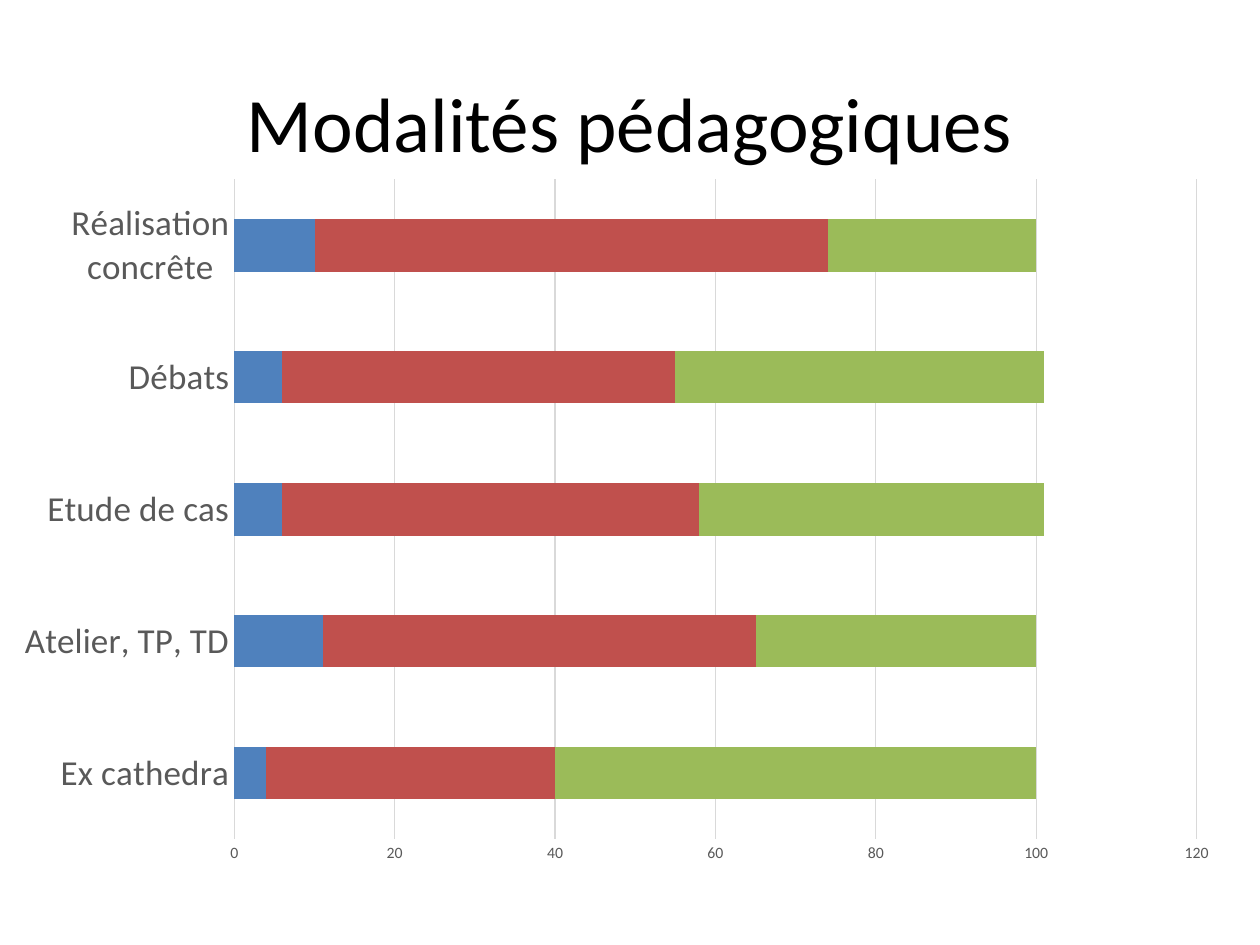
from dataclasses import dataclass

from lxml import etree
from pptx import Presentation
from pptx import util as u
from pptx.chart.data import CategoryChartData
from pptx.dml.color import RGBColor
from pptx.enum import chart as charts, text
from pptx.oxml.ns import qn

FONT = "Calibri"
GREY = "595959"
PALE = "D9D9D9"


@dataclass
class Band:
    shares: tuple[int, ...]
    color: str


METHODS = ["Ex cathedra", "Atelier, TP, TD", "Etude de cas", "Débats", "Réalisation concrête"]
BANDS = [
    Band((4, 11, 6, 6, 10), "4F81BD"),
    Band((36, 54, 52, 49, 64), "C0504D"),
    Band((60, 35, 43, 46, 26), "9BBB59"),
]


def rgb(color: str) -> RGBColor:
    return RGBColor.from_string(color)


def set_font(font, size: float, color: str) -> None:
    font.name = FONT
    font.size = u.Pt(size)
    font.bold = False
    font.color.rgb = rgb(color)


def set_line(line, color: str) -> None:
    line.color.rgb = rgb(color)
    line.width = u.Pt(0.75)


def place_plot(chart, x: float, y: float, w: float, h: float) -> None:
    """Fix the inner plot area, in fractions of the chart."""
    area = chart.plots[0]._element.getparent()
    for old in area.findall(qn("c:layout")):
        area.remove(old)
    layout = etree.Element(qn("c:layout"))
    manual = etree.SubElement(layout, qn("c:manualLayout"))
    settings = {"layoutTarget": "inner", "xMode": "edge", "yMode": "edge",
                "x": x, "y": y, "w": w, "h": h}
    for tag, value in settings.items():
        etree.SubElement(manual, qn(f"c:{tag}")).set("val", str(value))
    area.insert(0, layout)


def format_axis(axis, size: float) -> None:
    axis.major_tick_mark = axis.minor_tick_mark = charts.XL_TICK_MARK.NONE
    set_font(axis.tick_labels.font, size, GREY)


def add_title(page, words: str) -> None:
    title = page.shapes.title
    title.left, title.top = u.Cm(1.75), u.Cm(1.02)
    title.width, title.height = u.Cm(21.9), u.Cm(2.87)
    title.text_frame.text = words
    title.text_frame.vertical_anchor = text.MSO_ANCHOR.MIDDLE
    para = title.text_frame.paragraphs[0]
    para.alignment = text.PP_ALIGN.CENTER
    set_font(para.font, 44, "000000")


def add_bars(page) -> None:
    data = CategoryChartData()
    data.categories = METHODS
    for band in BANDS:
        data.add_series("", band.shares)
    chart = page.shapes.add_chart(
        charts.XL_CHART_TYPE.BAR_STACKED,
        u.Cm(0), u.Cm(3.3), u.Cm(24.87), u.Cm(15.65), data).chart
    chart.has_title = False
    chart.has_legend = False
    set_font(chart.font, 10, "000000")
    place_plot(chart, 0.19, 0.02, 0.78, 0.85)

    plot = chart.plots[0]
    plot.gap_width, plot.overlap = 150, 100
    plot.vary_by_categories = False
    for series, band in zip(plot.series, BANDS):
        series.format.fill.solid()
        series.format.fill.fore_color.rgb = rgb(band.color)

    format_axis(chart.category_axis, 20)
    set_line(chart.category_axis.format.line, PALE)
    values = chart.value_axis
    format_axis(values, 9)
    values.minimum_scale, values.maximum_scale, values.major_unit = 0, 120, 20
    values.format.line.fill.background()
    values.has_major_gridlines = True
    set_line(values.major_gridlines.format.line, PALE)


def main() -> None:
    deck = Presentation()
    deck.slide_width, deck.slide_height = u.Cm(25.4), u.Cm(19.05)
    page = deck.slides.add_slide(deck.slide_layouts.get_by_name("Title Only"))
    add_title(page, "Modalités pédagogiques")
    add_bars(page)
    deck.save("out.pptx")


if __name__ == "__main__":
    main()
